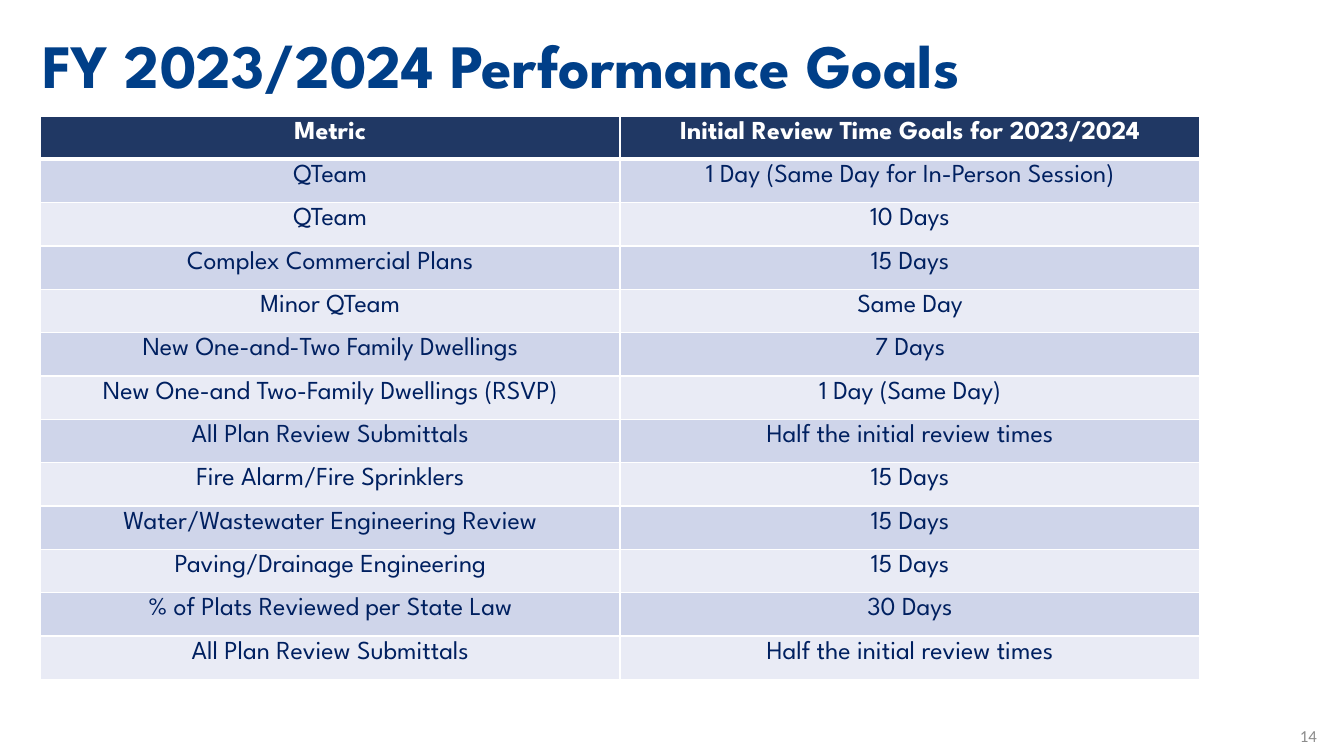
from lxml import etree
from pptx import Presentation
from pptx.dml.color import RGBColor
from pptx.enum.text import MSO_ANCHOR, MSO_AUTO_SIZE, PP_ALIGN
from pptx.oxml.ns import qn
from pptx.util import Inches, Pt

LEFT, CENTER, RIGHT = PP_ALIGN.LEFT, PP_ALIGN.CENTER, PP_ALIGN.RIGHT
MIDDLE, BOTTOM = MSO_ANCHOR.MIDDLE, MSO_ANCHOR.BOTTOM
NO_AUTOSIZE = MSO_AUTO_SIZE.NONE
TITLE_ONLY = 5

GOALS = [
    ("Metric", "Initial Review Time Goals for 2023/2024"),
    ("QTeam", "1 Day (Same Day for In-Person Session)"),
    ("QTeam", "10 Days"),
    ("Complex Commercial Plans", "15 Days"),
    ("Minor QTeam", "Same Day"),
    ("New One-and-Two Family Dwellings", "7 Days"),
    ("New One-and Two-Family Dwellings (RSVP)", "1 Day (Same Day)"),
    ("All Plan Review Submittals", "Half the initial review times"),
    ("Fire Alarm/Fire Sprinklers", "15 Days"),
    ("Water/Wastewater Engineering Review", "15 Days"),
    ("Paving/Drainage Engineering", "15 Days"),
    ("% of Plats Reviewed per State Law", "30 Days"),
    ("All Plan Review Submittals", "Half the initial review times"),
]


def rgb(value):
    return RGBColor.from_string(value)


class SlideBuilder:
    heading_font = "League Spartan"
    header_fill = "203864"
    band_fills = ("E9EBF5", "CFD5EA")
    border = "FFFFFF"
    title_style = {"name": heading_font, "size": Pt(44), "bold": True, "color": "003F88"}
    header_style = {"name": heading_font, "size": Pt(18.5), "bold": True, "color": "FFFFFF"}
    body_style = {**header_style, "bold": False, "color": "002060"}
    number_style = {"name": "Calibri", "size": Pt(12), "bold": False, "color": "8C8C8C"}

    def __init__(self, prs):
        self.s = prs.slides.add_slide(prs.slide_layouts[TITLE_ONLY])

    def add_text(self, tf, text, style, align):
        p = tf.paragraphs[0]
        p.alignment = align
        r = p.add_run()
        r.text = text
        for key, value in style.items():
            if key == "color":
                r.font.color.rgb = rgb(value)
            else:
                setattr(r.font, key, value)

    def place(self, sp, box, text, style, align, anchor):
        sp.left, sp.top, sp.width, sp.height = (Inches(v) for v in box)
        tf = sp.text_frame
        frame = {"word_wrap": True, "auto_size": NO_AUTOSIZE, "vertical_anchor": anchor}
        for key, value in frame.items():
            setattr(tf, key, value)
        self.add_text(tf, text, style, align)
        tf.paragraphs[0].line_spacing = 1.0

    def title(self, text, box):
        self.place(self.s.shapes.title, box, text, self.title_style, LEFT, BOTTOM)

    def text(self, text, box):
        sp = self.s.shapes.add_textbox(*(Inches(v) for v in box))
        self.place(sp, box, text, self.number_style, RIGHT, MIDDLE)

    def borders(self, cell, widths):
        tcPr = cell._tc.get_or_add_tcPr()
        for i, (side, width) in enumerate(widths.items()):
            ln = etree.Element(qn(f"a:ln{side}"), w=str(Pt(width)))
            fill = etree.SubElement(ln, qn("a:solidFill"))
            etree.SubElement(fill, qn("a:srgbClr"), val=self.border)
            tcPr.insert(i, ln)

    def table(self, rows, box):
        lengths = [Inches(v) for v in box]
        table = self.s.shapes.add_table(len(rows), len(rows[0]), *lengths).table
        for row in table.rows:
            row.height = Inches(box[3] / len(rows))
        for i, values in enumerate(rows):
            header = i == 0
            fill = self.header_fill if header else self.band_fills[i % 2]
            style = self.header_style if header else self.body_style
            widths = {"L": 1, "R": 1, "T": 3 if i == 1 else 1, "B": 3 if header else 1}
            for j, value in enumerate(values):
                cell = table.cell(i, j)
                cell.fill.solid()
                cell.fill.fore_color.rgb = rgb(fill)
                self.add_text(cell.text_frame, value, style, CENTER)
                self.borders(cell, widths)


def main():
    prs = Presentation()
    prs.slide_width, prs.slide_height = Inches(13.33), Inches(7.5)
    slide = SlideBuilder(prs)
    slide.table(GOALS, (0.4, 1.15, 11.5, 5.59))
    slide.text("14", (10.16, 7.1, 3, 0.4))
    slide.title("FY 2023/2024 Performance Goals", (0.32, 0.21, 11.58, 0.84))
    prs.save("out.pptx")


if __name__ == "__main__":
    main()
